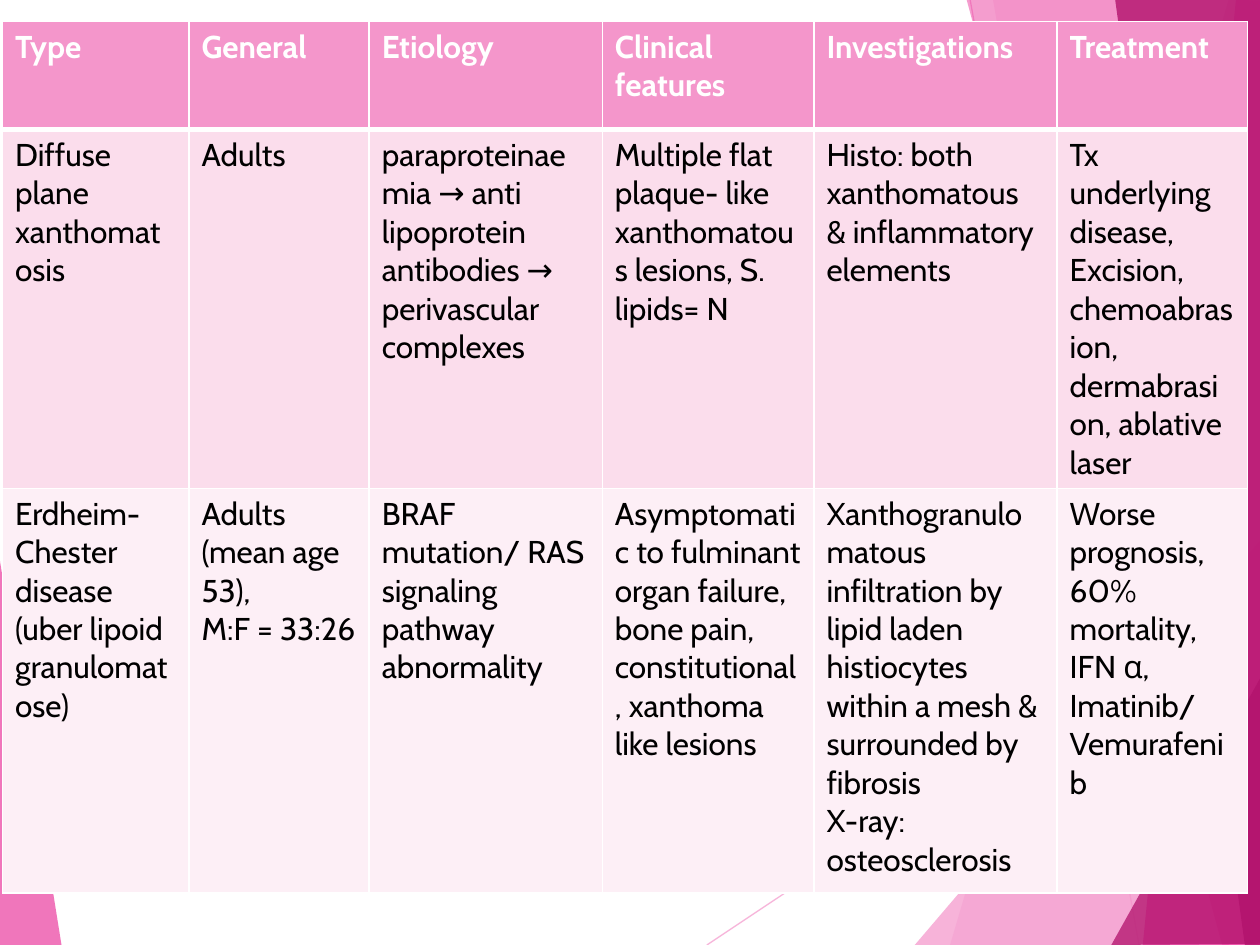
from lxml import etree
from pptx import Presentation
from pptx.dml.color import RGBColor
from pptx.enum.shapes import MSO_CONNECTOR
from pptx.oxml.ns import qn
from pptx.util import Inches, Pt

STRAIGHT = MSO_CONNECTOR.STRAIGHT
PINK, ROSE, PLUM, WHITE, BLACK = "F496CB", "EB3D9F", "B2136D", "FFFFFF", "000000"
TINTS = (PINK, "FBDDEC", "FDEFF6")

# Facets: colour, opacity in percent, corners in inches
FACETS = [
    (PINK, 36, [(9.75, 0), (7.54, 7.5), (10.02, 7.51), (10.01, 0.01)]),
    (PINK, 20, [(7.88, -0.01), (9.19, 7.5), (10.01, 7.5), (10.01, -0.01)]),
    (PINK, 72, [(7.26, 7.5), (10, 4.29), (10.01, 7.5)]),
    (ROSE, 50, [(7.67, -0.01), (9.7, 7.5), (10.01, 7.49), (10.01, -0.01)]),
    (ROSE, 66, [(9.81, -0.01), (9.07, 7.5), (10.01, 7.5), (10, -0.01)]),
    (PLUM, 80, [(8.85, -0.01), (9.88, 7.5), (10.02, 7.5), (10, -0.01)]),
    (PLUM, 76, [(8.82, 7.5), (10.02, 5.35), (10.02, 7.49)]),
    (ROSE, 70, [(-0.01, 4.39), (0.49, 7.51), (-0.01, 7.5)]),
]
RAYS = [(5.61, 7.5, 10.01, 4.57), (7.7, 0, 9.04, 7.5)]

COLS = (1.48, 1.43, 1.85, 1.68, 1.93, 1.51)
ROWS = (0.86, 2.18, 3.21)
# A line break within a cell starts a new paragraph
CELLS = [
    ["Type", "General", "Etiology", "Clinical features", "Investigations",
     "Treatment"],
    ["Diffuse plane xanthomatosis",
     "Adults",
     "paraproteinaemia → anti lipoprotein antibodies → perivascular complexes",
     "Multiple flat plaque- like xanthomatous lesions, S. lipids= N",
     "Histo: both xanthomatous & inflammatory elements",
     "Tx underlying disease,\n"
     "Excision, chemoabrasion, dermabrasion, ablative laser"],
    ["Erdheim- Chester disease\n(uber lipoid granulomatose)",
     "Adults (mean age 53),\nM:F = 33:26",
     "BRAF mutation/ RAS signaling pathway abnormality",
     "Asymptomatic to fulminant organ failure, bone pain, constitutional, "
     "xanthoma like lesions",
     "Xanthogranulomatous infiltration by lipid laden histiocytes within a "
     "mesh & surrounded by fibrosis\nX-ray: osteosclerosis",
     "Worse prognosis, 60% mortality,\nIFN α,\nImatinib/ Vemurafenib"],
]


def paint(target, color, alpha=100):
    """Give a fill (of a shape, line or cell) a solid colour."""
    target.solid()
    target.fore_color.rgb = RGBColor.from_string(color)
    if alpha < 100:
        for clr in target._xPr.iter(qn("a:srgbClr")):
            etree.SubElement(clr, qn("a:alpha"), val=str(alpha * 1000))


def write(frame, text, size=18, color=BLACK, bold=False, font="Cabin"):
    for i, line in enumerate(text.split("\n")):
        para = frame.add_paragraph() if i else frame.paragraphs[0]
        run = para.add_run()
        run.text = line
        run.font.size, run.font.name, run.font.bold = Pt(size), font, bold
        run.font.color.rgb = RGBColor.from_string(color)


def edge(cell, side, width):
    """Add a white border; call before the cell is filled."""
    props = cell._tc.get_or_add_tcPr()
    line = etree.SubElement(props, qn("a:ln" + side), w=str(Pt(width)))
    fill = etree.SubElement(line, qn("a:solidFill"))
    etree.SubElement(fill, qn("a:srgbClr"), val=WHITE)


def add_decor(slide, left, top):
    """Draw the translucent facets and thin rays behind the table."""
    shapes = slide.shapes.add_group_shape().shapes

    def spot(x, y):
        return Inches(left + x), Inches(top + y)

    for x1, y1, x2, y2 in RAYS:
        ray = shapes.add_connector(STRAIGHT, *spot(x1, y1), *spot(x2, y2))
        ray.line.width = Pt(0.75)
        paint(ray.line.fill, PINK, 70)
        etree.SubElement(ray._element.spPr, qn("a:effectLst"))

    for color, alpha, corners in FACETS:
        first, *rest = [spot(x, y) for x, y in corners]
        pen = shapes.build_freeform(*first)
        pen.add_line_segments(rest, close=True)
        facet = pen.convert_to_shape()
        facet.shadow.inherit = False
        facet.line.fill.background()
        facet.fill.solid()
        facet.fill.fore_color.rgb = RGBColor.from_string(color)
        clr = facet._element.spPr.find(qn("a:solidFill"))[0]
        etree.SubElement(clr, qn("a:alpha"), val=str(alpha * 1000))


def add_grid(slide, left, top):
    """Place the comparison table."""
    table = slide.shapes.add_table(
        len(ROWS), len(COLS), Inches(left), Inches(top),
        Inches(sum(COLS)), Inches(sum(ROWS))).table
    for col, width in zip(table.columns, COLS):
        col.width = Inches(width)
    for r, (row, height) in enumerate(zip(table.rows, ROWS)):
        row.height = Inches(height)
        head = r == 0
        for cell, text in zip(row.cells, CELLS[r]):
            for side in "LRTB":
                thick = (side == "B" and head) or (side == "T" and r == 1)
                edge(cell, side, 3 if thick else 1)
            paint(cell.fill, TINTS[r])
            write(cell.text_frame, text, bold=head,
                  color=WHITE if head else BLACK)


def main():
    deck = Presentation()
    deck.slide_width, deck.slide_height = Inches(10), Inches(7.5)
    slide = deck.slides.add_slide(deck.slide_layouts[6])
    paint(slide.background.fill, WHITE)
    add_decor(slide, 0, 0)
    add_grid(slide, 0.02, 0.17)
    deck.save("out.pptx")


if __name__ == "__main__":
    main()
